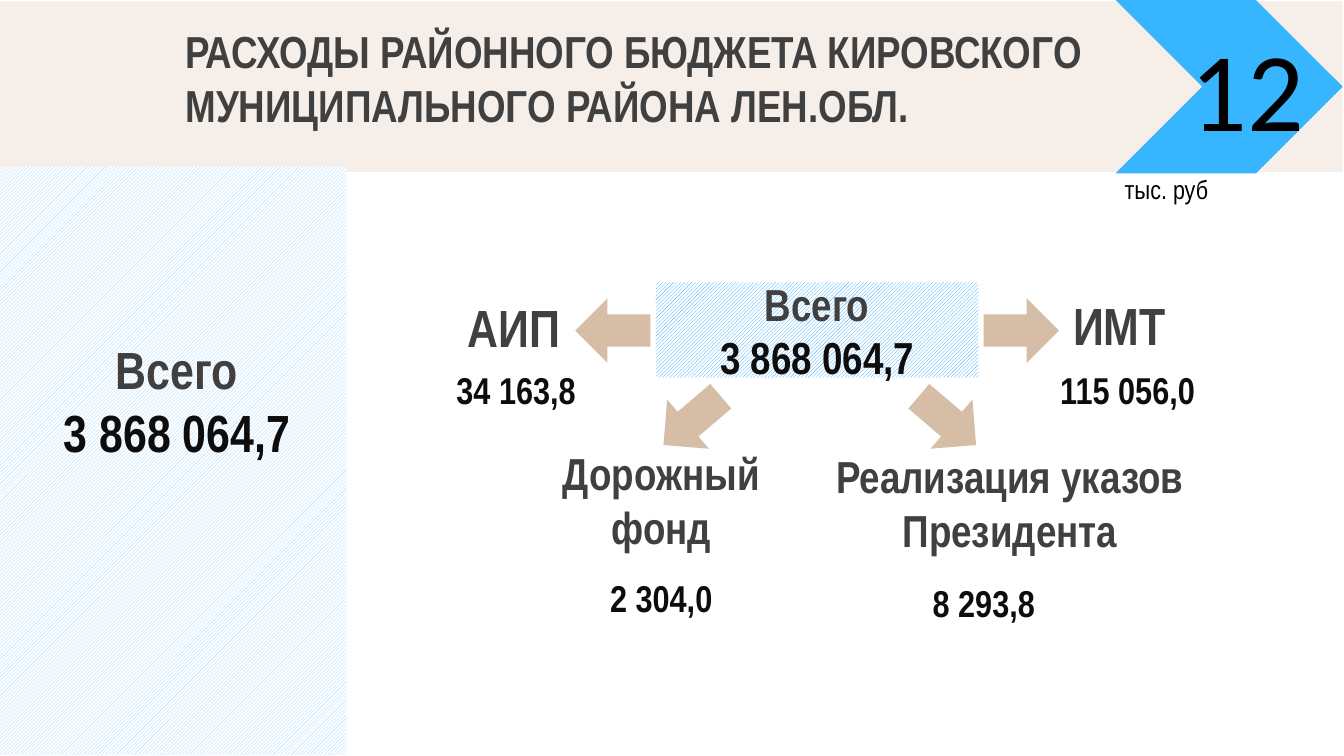
from dataclasses import dataclass

from pptx import Presentation
from pptx.dml.color import RGBColor
from pptx.enum.dml import MSO_PATTERN as Pattern
from pptx.enum.shapes import MSO_SHAPE as Shape
from pptx.enum.text import MSO_ANCHOR as Anchor
from pptx.enum.text import MSO_AUTO_SIZE as AutoSize
from pptx.enum.text import PP_ALIGN as Align
from pptx.util import Emu, Pt

PX = 9144  # EMU in one px, 100 px to the inch


@dataclass(frozen=True)
class Theme:
    font: str = "Arial Narrow"
    number_font: str = "Calibri"
    paper: str = "FFFFFF"
    band: str = "F5EEE9"
    accent: str = "37B6FF"
    arrow: str = "D6BDA6"
    hatch_strong: str = "2DA5FF"
    hatch_soft: str = "97D2FF"
    label: str = "404040"
    value: str = "0D0D0D"
    plain: str = "000000"
    unit_size: int = 14
    value_size: int = 20
    label_size: int = 24
    total_size: int = 28
    page_size: int = 60
    page_gap_size: int = 80


def rgb(code):
    return RGBColor.from_string(code)


class SlideBuilder:
    def __init__(self, slide, theme):
        self.slide = slide
        self.theme = theme

    def shape(self, kind, box, color, hatched=False, flip=False, turn=0):
        shape = self.slide.shapes.add_shape(kind, *(Emu(v * PX) for v in box))
        shape.shadow.inherit = False
        shape.line.fill.background()
        if hatched:
            shape.fill.patterned()
            shape.fill.pattern = Pattern.LIGHT_UPWARD_DIAGONAL
            shape.fill.fore_color.rgb = rgb(color)
            shape.fill.back_color.rgb = rgb(self.theme.paper)
        else:
            shape.fill.solid()
            shape.fill.fore_color.rgb = rgb(color)
        if flip:
            shape._element.spPr.xfrm.set("flipH", "1")
        shape.rotation = turn
        return shape

    def run(self, paragraph, words, size, color, bold=True, font=None):
        run = paragraph.add_run()
        run.text = words
        run.font.color.rgb = rgb(color)
        style = {"name": font or self.theme.font, "size": Pt(size), "bold": bold}
        for key, setting in style.items():
            setattr(run.font, key, setting)

    def lines(self, frame, rows, size, align=Align.CENTER, bold=True):
        """Write one paragraph for each (words, color) row."""
        for index, (words, color) in enumerate(rows):
            paragraph = frame.add_paragraph() if index else frame.paragraphs[0]
            paragraph.alignment = align
            self.run(paragraph, words, size, color, bold)

    def frame(self, box, wrap=True, inset=True):
        """Add a text box and return its empty text frame."""
        frame = self.slide.shapes.add_textbox(*(Emu(v * PX) for v in box)).text_frame
        layout = {"word_wrap": wrap, "auto_size": AutoSize.SHAPE_TO_FIT_TEXT}
        if not inset:
            sides = ("left", "top", "right", "bottom")
            layout |= {f"margin_{side}": 0 for side in sides}
        for key, setting in layout.items():
            setattr(frame, key, setting)
        return frame

    def text(self, box, rows, size, align=Align.CENTER, bold=True, **layout):
        self.lines(self.frame(box, **layout), rows, size, align, bold)

    def page_number(self, box, number):
        theme = self.theme
        paragraph = self.frame(box, inset=False).paragraphs[0]
        paragraph.line_spacing = Pt(89.6)
        for words, size in ((number, theme.page_size), (" ", theme.page_gap_size)):
            self.run(paragraph, words, size, theme.plain, False, theme.number_font)


def main():
    deck = Presentation()
    deck.slide_width = Emu(1000 * PX)
    deck.slide_height = Emu(deck.slide_width * 9 // 16)
    theme = Theme()
    page = SlideBuilder(deck.slides.add_slide(deck.slide_layouts[6]), theme)
    total = [("Всего", theme.label), ("3 868 064,7", theme.value)]

    # Header
    page.shape(Shape.RECTANGLE, (-1, 1, 1000, 127), theme.band)
    page.shape(Shape.CHEVRON, (830, 0, 169, 129), theme.accent)
    page.page_number((886, -4, 107, 126), "12")
    page.text((827, 124, 83, 34), [("тыс. руб", theme.plain)], theme.unit_size,
              align=Align.LEFT, bold=False, wrap=False)
    title = "РАСХОДЫ РАЙОННОГО БЮДЖЕТА КИРОВСКОГО МУНИЦИПАЛЬНОГО РАЙОНА ЛЕН.ОБЛ."
    page.text((138, 18, 705, 81), [(title, theme.label)], theme.label_size,
              align=Align.LEFT, inset=False)

    # Total in the middle, with arrows to its parts
    hub = page.shape(Shape.RECTANGLE, (488, 210, 240, 71), theme.hatch_strong,
                     hatched=True).text_frame
    hub.vertical_anchor = Anchor.MIDDLE
    page.lines(hub, total, theme.label_size)
    for left, top, flip, turn in (
        (428, 222, False, 0),
        (732, 222, True, 0),
        (487, 289, False, -40.4),
        (677, 289, True, 40.4),
    ):
        page.shape(Shape.LEFT_ARROW, (left, top, 56, 48), theme.arrow,
                   flip=flip, turn=turn)

    # Parts: name box, name lines, name size, wrap, value, value left and top
    big, small = theme.total_size, theme.label_size
    for box, names, size, wrap, amount, left, top in (
        ((335, 215, 95, 59), ["АИП"], big, True, "34 163,8", 317, 268),
        ((788, 213, 90, 57), ["ИМТ"], big, True, "115 056,0", 772, 268),
        ((408, 327, 168, 91), ["Дорожный", "фонд"], small, False,
         "2 304,0", 425, 423),
        ((610, 329, 283, 91), ["Реализация указов", "Президента"], small, False,
         "8 293,8", 665, 427),
    ):
        page.text(box, [(name, theme.label) for name in names], size, wrap=wrap)
        page.text((left, top, 134, 44), [(amount, theme.value)], theme.value_size)

    # Side panel
    page.shape(Shape.RECTANGLE, (0, 124, 258, 438), theme.hatch_soft, hatched=True)
    page.text((3, 246, 257, 104), total, theme.total_size)

    deck.save("out.pptx")


if __name__ == "__main__":
    main()
